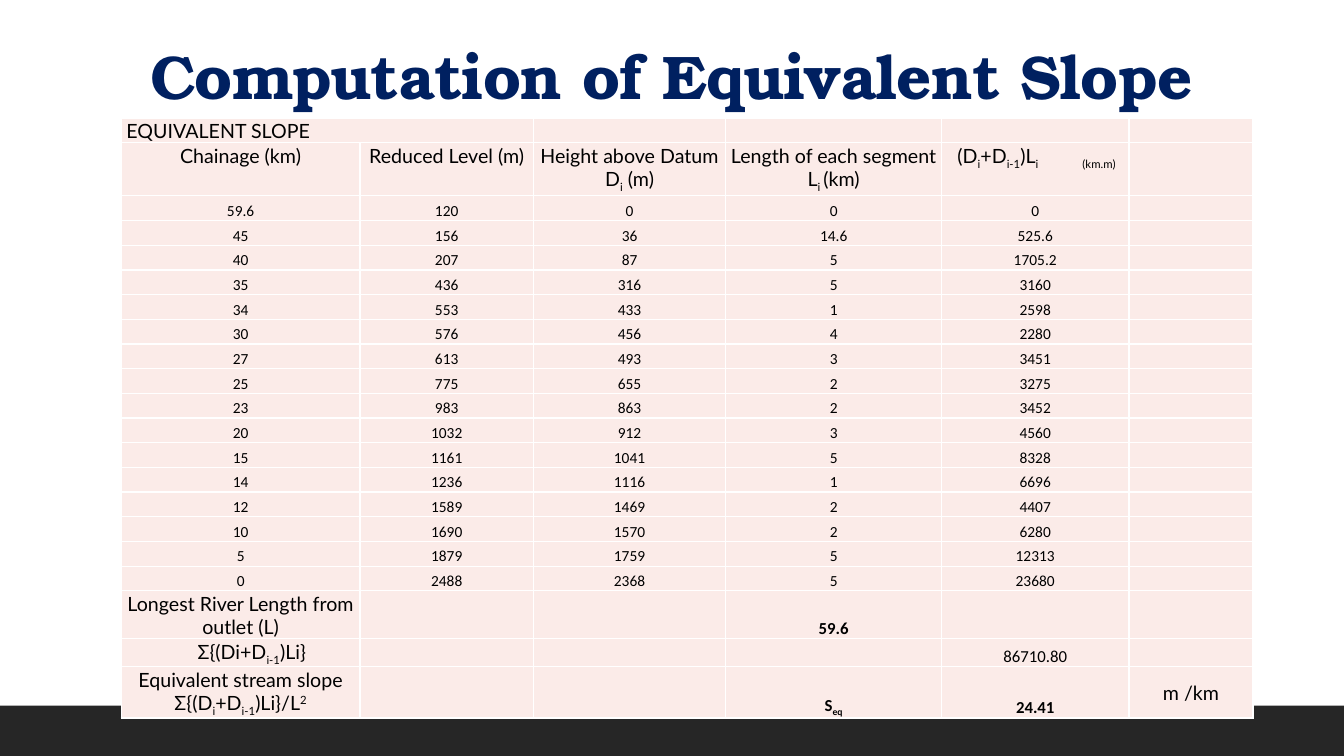
import lxml.etree
import pptx
import pptx.dml.color
import pptx.enum.shapes
import pptx.enum.text
import pptx.oxml.ns
import pptx.util

Pt = pptx.util.Pt
qn = pptx.oxml.ns.qn
ANCHOR = pptx.enum.text.MSO_ANCHOR
ALIGN = pptx.enum.text.PP_ALIGN

# Content: text between tildes is subscript, or superscript if it starts with ^
TITLE = "Computation of Equivalent Slope"
CAPTION = "EQUIVALENT SLOPE"
HEADERS = [
    "Chainage (km)",
    "Reduced Level (m)",
    "Height above Datum\nD~i~ (m)",
    "Length of each segment\nL~i ~(km)",
    "(D~i~+D~i-1~)L~i\t(km.m)~",
]
SURVEY = [
    ("59.6", "120", "0", "0", "0"),
    ("45", "156", "36", "14.6", "525.6"),
    ("40", "207", "87", "5", "1705.2"),
    ("35", "436", "316", "5", "3160"),
    ("34", "553", "433", "1", "2598"),
    ("30", "576", "456", "4", "2280"),
    ("27", "613", "493", "3", "3451"),
    ("25", "775", "655", "2", "3275"),
    ("23", "983", "863", "2", "3452"),
    ("20", "1032", "912", "3", "4560"),
    ("15", "1161", "1041", "5", "8328"),
    ("14", "1236", "1116", "1", "6696"),
    ("12", "1589", "1469", "2", "4407"),
    ("10", "1690", "1570", "2", "6280"),
    ("5", "1879", "1759", "5", "12313"),
    ("0", "2488", "2368", "5", "23680"),
]
LENGTH_LABEL, LENGTH = "Longest River Length from outlet (L)", "59.6"
SUM_LABEL, SUM = "Ʃ{(Di+D~i-1~)Li}", "86710.80"
SLOPE_LABEL = "Equivalent stream slope Ʃ{(D~i~+D~i-1~)Li}/L~^2~"
SLOPE_SYMBOL, SLOPE, SLOPE_UNIT = "S~eq~", "24.41", "m /km"

# Layout
SLIDE_WIDTH, SLIDE_HEIGHT, BAR_HEIGHT = 960, 540, 36
TABLE_LEFT, TABLE_TOP = 86.6, 84.5
COLUMN_WIDTHS = [170.6, 123.8, 137.5, 154.1, 133.9, 88.6]
ROW_HEIGHTS = [17.1, 37.9] + [17.64] * len(SURVEY) + [34.3, 20, 36.4]
LENGTH_ROW = 2 + len(SURVEY)
SUM_ROW, SLOPE_ROW = LENGTH_ROW + 1, LENGTH_ROW + 2

# Text styles: font, size, bold
LABEL = ("Lato", 14, False)
DATA = ("Calibri", 11, False)
TOTAL = ("Calibri", 12, False)
RESULT = ("Calibri", 12, True)


def color(value):
    return pptx.dml.color.RGBColor.from_string(value)


def fill_solid(target, value):
    target.fill.solid()
    target.fill.fore_color.rgb = color(value)


def add_run(paragraph, text, style, value="000000"):
    run = paragraph.add_run()
    run.text = text
    run.font.name, run.font.bold = style[0], style[2]
    run.font.size = Pt(style[1])
    run.font.color.rgb = color(value)
    return run


def write(cell, text, style, anchor=ANCHOR.BOTTOM, align=ALIGN.CENTER, indent=0):
    cell.vertical_anchor = anchor
    paragraph = cell.text_frame.paragraphs[0]
    paragraph.alignment = align
    if indent:
        paragraph._p.get_or_add_pPr().set("marL", str(Pt(indent)))
    for index, piece in enumerate(text.split("~")):
        for line, words in enumerate(piece.split("\n")):
            if line:
                paragraph.add_line_break()
            if words:
                run = add_run(paragraph, words.lstrip("^"), style)
                if index % 2:
                    baseline = "30000" if words.startswith("^") else "-25000"
                    run._r.get_or_add_rPr().set("baseline", baseline)
    return paragraph


def format_cell(cell):
    cell.margin_left = cell.margin_right = cell.margin_top = Pt(0.7)
    cell.margin_bottom = 0
    properties = cell._tc.get_or_add_tcPr()
    for side in ("a:lnL", "a:lnR", "a:lnT", "a:lnB"):
        line = lxml.etree.SubElement(properties, qn(side), w=str(Pt(1)))
        solid = lxml.etree.SubElement(line, qn("a:solidFill"))
        lxml.etree.SubElement(solid, qn("a:srgbClr"), val="FFFFFF")
    fill_solid(cell, "FBEBE8")
    # Keeps empty cells from stretching their row
    paragraph = cell.text_frame.paragraphs[0]
    if not paragraph.runs:
        lxml.etree.SubElement(paragraph._p, qn("a:endParaRPr"), sz="1100")


presentation = pptx.Presentation()
presentation.slide_width = Pt(SLIDE_WIDTH)
presentation.slide_height = Pt(SLIDE_HEIGHT)
slide = presentation.slides.add_slide(presentation.slide_layouts[5])

# Bottom bar
bar = slide.shapes.add_shape(
    pptx.enum.shapes.MSO_SHAPE.RECTANGLE,
    0, Pt(SLIDE_HEIGHT - BAR_HEIGHT), Pt(SLIDE_WIDTH), Pt(BAR_HEIGHT))
bar.shadow.inherit = False
fill_solid(bar, "262626")
bar.line.fill.background()

# Title
title = slide.shapes.title
title.left, title.top, title.width, title.height = Pt(100), Pt(9.4), Pt(781), Pt(75)
frame = title.text_frame
frame.auto_size = pptx.enum.text.MSO_AUTO_SIZE.NONE
frame.vertical_anchor = ANCHOR.BOTTOM
paragraph = frame.paragraphs[0]
paragraph.alignment = ALIGN.LEFT
paragraph.line_spacing = 0.9
title_run = add_run(paragraph, TITLE, ("TeX Gyre Bonum", 44, True), "002060")
title_run._r.get_or_add_rPr().set("spc", "-50")

# Table grid
table = slide.shapes.add_table(
    len(ROW_HEIGHTS), len(COLUMN_WIDTHS), Pt(TABLE_LEFT), Pt(TABLE_TOP),
    Pt(sum(COLUMN_WIDTHS)), Pt(sum(ROW_HEIGHTS))).table
table.first_row = table.horz_banding = False
for column, width in zip(table.columns, COLUMN_WIDTHS):
    column.width = Pt(width)
for row, height in zip(table.rows, ROW_HEIGHTS):
    row.height = Pt(height)

# Caption and headers
table.cell(0, 0).merge(table.cell(0, 1))
write(table.cell(0, 0), CAPTION, LABEL, align=ALIGN.LEFT, indent=3)
for column, text in enumerate(HEADERS[:-1]):
    write(table.cell(1, column), text, LABEL, ANCHOR.TOP)
product = write(table.cell(1, 4), HEADERS[-1], LABEL, ANCHOR.TOP, ALIGN.LEFT, 10.7)
tabs = lxml.etree.SubElement(product._p.get_or_add_pPr(), qn("a:tabLst"))
lxml.etree.SubElement(tabs, qn("a:tab"), pos=str(Pt(89.3)), algn="l")

# Survey values
for row, values in enumerate(SURVEY, start=2):
    for column, value in enumerate(values):
        write(table.cell(row, column), value, DATA)

# Results
write(table.cell(LENGTH_ROW, 0), LENGTH_LABEL, LABEL, ANCHOR.TOP)
write(table.cell(LENGTH_ROW, 3), LENGTH, RESULT)
write(table.cell(SUM_ROW, 0), SUM_LABEL, LABEL, ANCHOR.TOP, indent=16)
write(table.cell(SUM_ROW, 4), SUM, TOTAL)
write(table.cell(SLOPE_ROW, 0), SLOPE_LABEL, LABEL)
write(table.cell(SLOPE_ROW, 3), SLOPE_SYMBOL, RESULT)
write(table.cell(SLOPE_ROW, 4), SLOPE, RESULT)
write(table.cell(SLOPE_ROW, 5), SLOPE_UNIT, LABEL, ANCHOR.MIDDLE)

for cell in table.iter_cells():
    format_cell(cell)

presentation.save("out.pptx")
